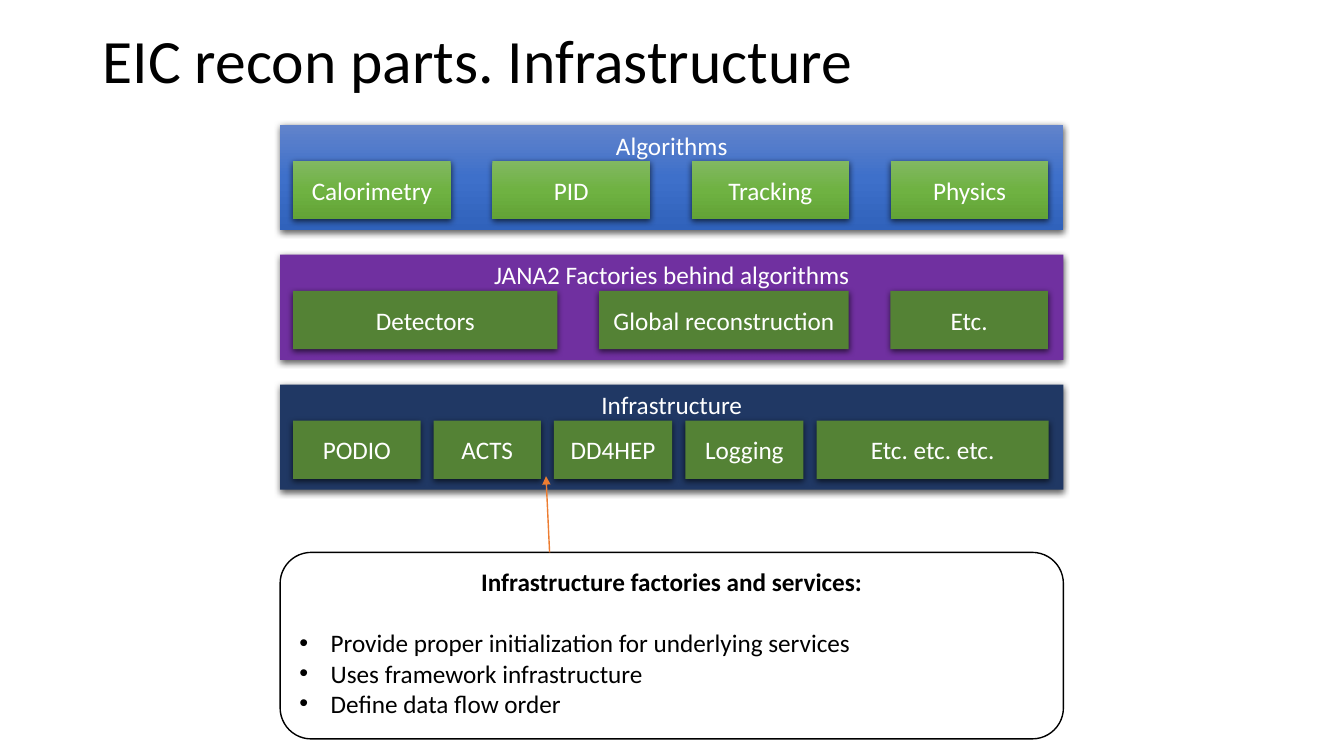
"""Build the slide on the pieces of the EIC reconstruction and their infrastructure."""
from copy import deepcopy
from dataclasses import dataclass
from typing import Any

from lxml import etree
from pptx import Presentation
from pptx import util as u
from pptx.dml import color
from pptx.enum import shapes, text
from pptx.oxml import ns

COLORS = {
    "black": "000000", "white": "FFFFFF", "purple": "7030A0", "navy": "203864",
    "green": "548235", "orange": "ED7D31",
    "blue top": "6183CB", "blue middle": "3E70CA", "blue bottom": "3062BB",
    "lime top": "81B861", "lime middle": "6FB242", "lime bottom": "62A336",
}
BLUE = ("blue top", "blue middle", "blue bottom")
LIME = ("lime top", "lime middle", "lime bottom")
FONT = "Calibri"
LAYER_LEFT, LAYER_TOP, LAYER_WIDTH, LAYER_HEIGHT, LAYER_PITCH = 7.06, 3.15, 19.74, 2.65, 3.27
COMPONENT_INSET, COMPONENT_DROP, COMPONENT_HEIGHT = 0.33, 0.91, 1.47
CALLOUT_TOP, CALLOUT_HEIGHT, CALLOUT_INSET = 13.92, 4.7, 0.23
LIST_INDENT = u.Cm(0.79)


@dataclass
class Component:
    label: str
    width: float


@dataclass
class Layer:
    label: str
    fill: tuple[str, ...]
    component_fill: tuple[str, ...]
    gap: float
    components: list[Component]


LAYERS = [
    Layer("Algorithms", BLUE, LIME, 1.05,
          [Component(label, 3.97) for label in ("Calorimetry", "PID", "Tracking", "Physics")]),
    Layer("JANA2 Factories behind algorithms", ("purple",), ("green",), 1.05,
          [Component("Detectors", 6.66), Component("Global reconstruction", 6.29),
           Component("Etc.", 3.97)]),
    Layer("Infrastructure", ("navy",), ("green",), 0.33,
          [Component("PODIO", 3.21), Component("ACTS", 2.7), Component("DD4HEP", 2.98),
           Component("Logging", 2.98), Component("Etc. etc. etc.", 5.85)]),
]
CALLOUT_HEADING = "Infrastructure factories and services:"
CALLOUT_ITEMS = [
    "Provide proper initialization for underlying services",
    "Uses framework infrastructure",
    "Define data flow order",
]


def rgb(name: str) -> color.RGBColor:
    """Return the named colour."""
    return color.RGBColor.from_string(COLORS[name])


def add_element(parent: Any, tag: str, **attributes: str) -> Any:
    """Append a drawing element with its attributes."""
    return etree.SubElement(parent, ns.qn(tag), attributes)


def place(shape: Any, left: float, top: float, width: float, height: float) -> None:
    """Move and size a shape, in centimetres."""
    shape.left, shape.top = u.Cm(left), u.Cm(top)
    shape.width, shape.height = u.Cm(width), u.Cm(height)


def set_font(paragraph: Any, size: int, name: str, bold: bool = False) -> None:
    """Set the font of a whole paragraph."""
    font = paragraph.font
    font.name, font.size, font.bold = FONT, u.Pt(size), bold
    font.color.rgb = rgb(name)


def paint(shape: Any, names: tuple[str, ...]) -> None:
    """Fill a shape with one colour or a downward gradient of three."""
    if len(names) == 1:
        shape.fill.solid()
        shape.fill.fore_color.rgb = rgb(names[0])
        return
    shape.fill.gradient()
    shape.fill.gradient_angle = 270
    stop_list = shape._element.spPr.find(".//" + ns.qn("a:gsLst"))
    stop_list.insert(1, deepcopy(stop_list[0]))
    for stop, name, position in zip(shape.fill.gradient_stops, names, (0, 0.5, 1)):
        stop.color.rgb = rgb(name)
        stop.position = position


def cast_shadow(shape: Any) -> None:
    """Give a shape a soft black shadow below it."""
    shape.shadow.inherit = False
    effects = shape._element.spPr.find(ns.qn("a:effectLst"))
    shadow = add_element(effects, "a:outerShdw", blurRad=str(u.Pt(4.5)), dist=str(u.Pt(1.5)),
                         dir="5400000", algn="ctr", rotWithShape="0")
    shade = add_element(shadow, "a:srgbClr", val=COLORS["black"])
    add_element(shade, "a:alpha", val="63000")


def add_block(group: Any, label: str, fill: tuple[str, ...], anchor: Any,
              left: float, top: float, width: float, height: float) -> None:
    """Add a labelled rectangle to a group."""
    block = group.shapes.add_shape(shapes.MSO_SHAPE.RECTANGLE, u.Cm(left), u.Cm(top),
                                   u.Cm(width), u.Cm(height))
    paint(block, fill)
    block.line.fill.background()
    cast_shadow(block)
    block.text_frame.vertical_anchor = anchor
    paragraph = block.text_frame.paragraphs[0]
    paragraph.text = label
    paragraph.alignment = text.PP_ALIGN.CENTER
    set_font(paragraph, 18, "white")


def add_layer(slide: Any, layer: Layer, top: float) -> None:
    """Add a layer with its row of components."""
    group = slide.shapes.add_group_shape()
    add_block(group, layer.label, layer.fill, text.MSO_ANCHOR.TOP,
              LAYER_LEFT, top, LAYER_WIDTH, LAYER_HEIGHT)
    left = LAYER_LEFT + COMPONENT_INSET
    for component in layer.components:
        add_block(group, component.label, layer.component_fill, text.MSO_ANCHOR.MIDDLE,
                  left, top + COMPONENT_DROP, component.width, COMPONENT_HEIGHT)
        left += component.width + layer.gap


def fill_title(title: Any) -> None:
    """Write and format the title."""
    place(title, 2.33, -0.23, 29.21, 3.68)
    frame = title.text_frame
    frame.text = "EIC recon parts. Infrastructure"
    frame.auto_size = text.MSO_AUTO_SIZE.NONE
    frame.vertical_anchor = text.MSO_ANCHOR.MIDDLE
    paragraph = frame.paragraphs[0]
    paragraph.alignment = text.PP_ALIGN.LEFT
    paragraph.line_spacing = 0.9
    set_font(paragraph, 44, "black")


def add_callout(slide: Any, body: Any) -> None:
    """Add the rounded frame and put the body list in it."""
    frame = slide.shapes.add_shape(shapes.MSO_SHAPE.ROUNDED_RECTANGLE, u.Cm(LAYER_LEFT),
                                   u.Cm(CALLOUT_TOP), u.Cm(LAYER_WIDTH), u.Cm(CALLOUT_HEIGHT))
    paint(frame, ("white",))
    frame.line.color.rgb = rgb("black")
    frame.line.width = u.Pt(1)
    frame.shadow.inherit = False

    slide.shapes._spTree.append(body._element)
    place(body, LAYER_LEFT + CALLOUT_INSET, CALLOUT_TOP + CALLOUT_INSET,
          LAYER_WIDTH - 2 * CALLOUT_INSET, CALLOUT_HEIGHT - 2 * CALLOUT_INSET)
    body.text_frame.text = "\n".join([CALLOUT_HEADING, *CALLOUT_ITEMS])
    body.text_frame.auto_size = text.MSO_AUTO_SIZE.NONE
    body.text_frame.vertical_anchor = text.MSO_ANCHOR.TOP
    heading, *items = body.text_frame.paragraphs
    for paragraph in (heading, *items):
        paragraph.space_before = u.Pt(0)
        set_font(paragraph, 18, "black", bold=paragraph is heading)
    heading.alignment = text.PP_ALIGN.CENTER
    heading.space_after = u.Pt(22)
    properties = heading._p.get_or_add_pPr()
    properties.set("marL", "0")
    properties.set("indent", "0")
    properties.insert_element_before(etree.Element(ns.qn("a:buNone")), "a:defRPr")
    for item in items:
        properties = item._p.get_or_add_pPr()
        properties.set("marL", str(LIST_INDENT))
        properties.set("indent", str(-LIST_INDENT))
        bullet = etree.Element(ns.qn("a:buChar"), {"char": "•"})
        properties.insert_element_before(bullet, "a:defRPr")


def add_arrow(slide: Any) -> None:
    """Add the arrow from the callout up to the infrastructure layer."""
    arrow = slide.shapes.add_connector(shapes.MSO_CONNECTOR.STRAIGHT, u.Cm(13.85),
                                       u.Cm(CALLOUT_TOP), u.Cm(13.76), u.Cm(12))
    arrow.line.color.rgb = rgb("orange")
    arrow.line.width = u.Pt(1)
    add_element(arrow.line._get_or_add_ln(), "a:tailEnd", type="triangle")
    add_element(arrow._element.spPr, "a:effectLst")


def main() -> None:
    """Build and save the presentation."""
    presentation = Presentation()
    presentation.slide_width, presentation.slide_height = u.Cm(33.87), u.Cm(19.05)
    slide = presentation.slides.add_slide(presentation.slide_layouts[1])
    fill_title(slide.shapes.title)
    for row, layer in enumerate(LAYERS):
        add_layer(slide, layer, LAYER_TOP + row * LAYER_PITCH)
    add_callout(slide, slide.placeholders[1])
    add_arrow(slide)
    presentation.save("out.pptx")


if __name__ == "__main__":
    main()
